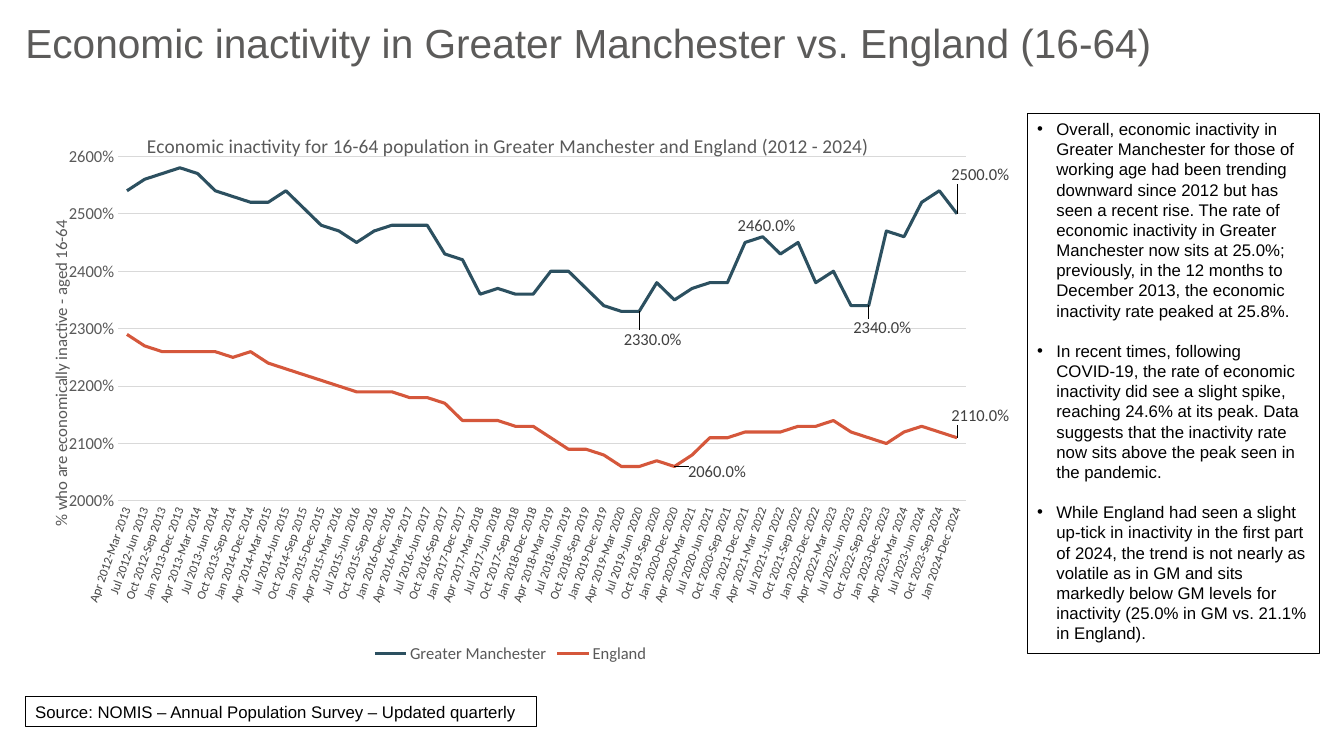
from lxml.etree import SubElement as Sub, fromstring
from pptx import Presentation
from pptx.chart.data import CategoryChartData as Data
from pptx.dml.color import RGBColor as RGB
from pptx.enum.chart import XL_CHART_TYPE as Kind, XL_LABEL_POSITION as Spot
from pptx.enum.chart import XL_LEGEND_POSITION as Side, XL_TICK_MARK as Tick
from pptx.enum.shapes import MSO_SHAPE as Shape
from pptx.enum.text import MSO_ANCHOR as Anchor, PP_ALIGN as Align
from pptx.oxml.ns import qn
from pptx.util import Inches, Pt

WIDE, HIGH = Inches(13.33), Inches(7.5)
NS = "http://schemas.openxmlformats.org/drawingml/2006/chart"
EXT = (f'<c:extLst xmlns:c="{NS}"><c:ext uri="{{CE6537A1-D6FC-4f65-9D91-7224C49458BB}}" '
       'xmlns:c15="http://schemas.microsoft.com/office/drawing/2012/chart">'
       '<c15:showLeaderLines val="1"/></c:ext></c:extLst>')
GREY, PALE = "595959", "D9D9D9"
NOTES = [
    "Overall, economic inactivity in Greater Manchester for those of working age had been "
    "trending downward since 2012 but has seen a recent rise. The rate of economic inactivity "
    "in Greater Manchester now sits at 25.0%; previously, in the 12 months to December 2013, "
    "the economic inactivity rate peaked at 25.8%.",
    "In recent times, following COVID-19, the rate of economic inactivity did see a slight "
    "spike, reaching 24.6% at its peak. Data suggests that the inactivity rate now sits above "
    "the peak seen in the pandemic.",
    "While England had seen a slight up-tick in inactivity in the first part of 2024, the "
    "trend is not nearly as volatile as in GM and sits markedly below GM levels for "
    "inactivity (25.0% in GM vs. 21.1% in England).",
]
SERIES = {
    "Greater Manchester": ("2C5060", [
        25.4, 25.6, 25.7, 25.8, 25.7, 25.4, 25.3, 25.2, 25.2, 25.4, 25.1, 24.8,
        24.7, 24.5, 24.7, 24.8, 24.8, 24.8, 24.3, 24.2, 23.6, 23.7, 23.6, 23.6,
        24, 24, 23.7, 23.4, 23.3, 23.3, 23.8, 23.5, 23.7, 23.8, 23.8, 24.5,
        24.6, 24.3, 24.5, 23.8, 24, 23.4, 23.4, 24.7, 24.6, 25.2, 25.4, 25,
    ], {29: (-0.02, 0.05), 36: (-0.03, -0.02), 42: (-0.02, 0.04), 47: (-0.01, -0.07)}),
    "England": ("D5573B", [
        22.9, 22.7, 22.6, 22.6, 22.6, 22.6, 22.5, 22.6, 22.4, 22.3, 22.2, 22.1,
        22, 21.9, 21.9, 21.9, 21.8, 21.8, 21.7, 21.4, 21.4, 21.4, 21.3, 21.3,
        21.1, 20.9, 20.9, 20.8, 20.6, 20.6, 20.7, 20.6, 20.8, 21.1, 21.1, 21.2,
        21.2, 21.2, 21.3, 21.3, 21.4, 21.2, 21.1, 21, 21.2, 21.3, 21.2, 21.1,
    ], {31: (0.01, 0.01), 47: (-0.01, -0.04)}),
}


def area(left, top, width, height):
    """Turn percentages of the slide into a box of lengths."""
    return [round(part * full / 100)
            for part, full in zip((left, top, width, height), (WIDE, HIGH) * 2)]


def paint(color, code):
    """Set a colour from its hex string."""
    color.rgb = RGB.from_string(code)


def style(font, size, code, name="Calibri"):
    """Format a font."""
    for key, value in {"size": Pt(size), "name": name, "bold": False}.items():
        setattr(font, key, value)
    paint(font.color, code)


def stroke(line, code, width):
    """Draw a line in one colour and width."""
    paint(line.color, code)
    line.width = Pt(width)


def period(step):
    """Name the twelve months that start at a quarter."""
    start, end = (("Apr", "Mar"), ("Jul", "Jun"), ("Oct", "Sep"), ("Jan", "Dec"))[step % 4]
    return f"{start} {2012 + (step + 1) // 4}-{end} {2013 + step // 4}"


def layout(node, index, **parts):
    """Give a chart part a manual layout."""
    for old in node.findall(qn("c:layout")):
        node.remove(old)
    frame = node.makeelement(qn("c:layout"))
    node.insert(index, frame)
    manual = Sub(frame, qn("c:manualLayout"))
    for key, value in parts.items():
        Sub(manual, qn(f"c:{key}"), val=str(value))


def head(slide, text):
    """Fill and place the title."""
    title = slide.shapes.title
    title.left, title.top, title.width, title.height = area(1.88, 3.07, 96.1, 10.8)
    frame = title.text_frame
    for key in ("left", "right", "top", "bottom"):
        setattr(frame, f"margin_{key}", 0)
    frame.vertical_anchor = Anchor.TOP
    frame.text = text
    para = frame.paragraphs[0]
    para.alignment, para.line_spacing = Align.LEFT, 0.9
    style(para.runs[0].font, 29, "5C5B5A", "Arial")


def box(slide, place, texts, bullet=False):
    """Draw an outlined box of paragraphs."""
    shape = slide.shapes.add_shape(Shape.RECTANGLE, *area(*place))
    shape.shadow.inherit = False
    shape.fill.background()
    stroke(shape.line, "000000", 0.75)
    frame = shape.text_frame
    frame.word_wrap, frame.vertical_anchor = True, Anchor.TOP
    for index, text in enumerate(texts):
        para = frame.add_paragraph() if index else frame.paragraphs[0]
        para.text, para.alignment = text, Align.LEFT
        style(para.runs[0].font, 12, "000000", "Arial")
        if index:
            para.space_before = Pt(14.4)
        if bullet:
            props = para._p.get_or_add_pPr()
            props.set("marL", str(Inches(0.19)))
            props.set("indent", str(-Inches(0.19)))
            Sub(props, qn("a:buFont"), typeface="Arial")
            Sub(props, qn("a:buChar"), char="•")


def label(point, shift):
    """Show a point's value, moved by shares of the chart."""
    tag = point.data_label
    style(tag.font, 12, "404040")
    tag.position = Spot.RIGHT
    node = tag._get_or_add_dLbl()
    layout(node, 1, x=shift[0], y=shift[1])
    form = node.makeelement(qn("c:numFmt"), formatCode="0.0%", sourceLinked="0")
    node.insert(2, form)


def caption(title, text, size, left, top):
    """Write a chart or axis title at a place in the chart."""
    title.text_frame.text = text
    style(title.text_frame.paragraphs[0].runs[0].font, size, GREY)
    layout(title._element, 1, xMode="edge", yMode="edge", x=left, y=top)


def axes(chart):
    """Format both axes."""
    cat, val = chart.category_axis, chart.value_axis
    for axis, size in ((cat, 9), (val, 12)):
        axis.major_tick_mark = axis.minor_tick_mark = Tick.NONE
        style(axis.tick_labels.font, size, GREY)
    stroke(cat.format.line, PALE, 0.75)
    cat._element.txPr.find(qn("a:bodyPr")).set("rot", "-4200000")
    for key, value in {"minimum_scale": 20, "maximum_scale": 26, "major_unit": 1}.items():
        setattr(val, key, value)
    val.tick_labels.number_format = "0%"
    val.tick_labels.number_format_is_linked = False
    val.format.line.fill.background()
    stroke(val.major_gridlines.format.line, PALE, 0.75)
    caption(val.axis_title, "% who are economically inactive - aged 16-64", 12, 0.02, 0.19)
    body = val.axis_title.text_frame._txBody.find(qn("a:bodyPr"))
    body.set("rot", "-5400000")
    body.set("vert", "horz")


def graph(slide):
    """Draw the line chart."""
    data = Data(number_format="0.0%")
    data.categories = [period(step) for step in range(48)]
    for name, (_, rates, _) in SERIES.items():
        data.add_series(name, rates)
    chart = slide.shapes.add_chart(Kind.LINE, *area(2.03, 14, 73.07, 74.27), data).chart
    style(chart.font, 12, "000000")
    caption(chart.chart_title, "Economic inactivity for 16-64 population in "
            "Greater Manchester and England (2012 - 2024)", 14, 0.12, 0.04)
    axes(chart)
    chart.has_legend = True
    chart.legend.position, chart.legend.include_in_layout = Side.BOTTOM, False
    style(chart.legend.font, 12, GREY)
    layout(chart._chartSpace.chart.plotArea, 0, layoutTarget="inner", xMode="edge",
           yMode="edge", x=0.094, y=0.09, w=0.877, h=0.614)
    chart.plots[0].vary_by_categories = False
    for line, (code, _, shifts) in zip(chart.plots[0].series, SERIES.values()):
        line.smooth = False
        stroke(line.format.line, code, 2.25)
        for index, shift in shifts.items():
            label(line.points[index], shift)
        line.data_labels.show_value = False
        line.data_labels._element.append(fromstring(EXT))


def main():
    """Build the slide."""
    deck = Presentation()
    deck.slide_width, deck.slide_height = WIDE, HIGH
    slide = deck.slides.add_slide(deck.slide_layouts[5])
    head(slide, "Economic inactivity in Greater Manchester vs. England (16-64)")
    box(slide, (1.88, 92.13, 38.03, 4),
        ["Source: NOMIS – Annual Population Survey – Updated quarterly"])
    box(slide, (76.44, 15.07, 21.76, 71.33), NOTES, bullet=True)
    graph(slide)
    deck.save("out.pptx")


if __name__ == "__main__":
    main()
